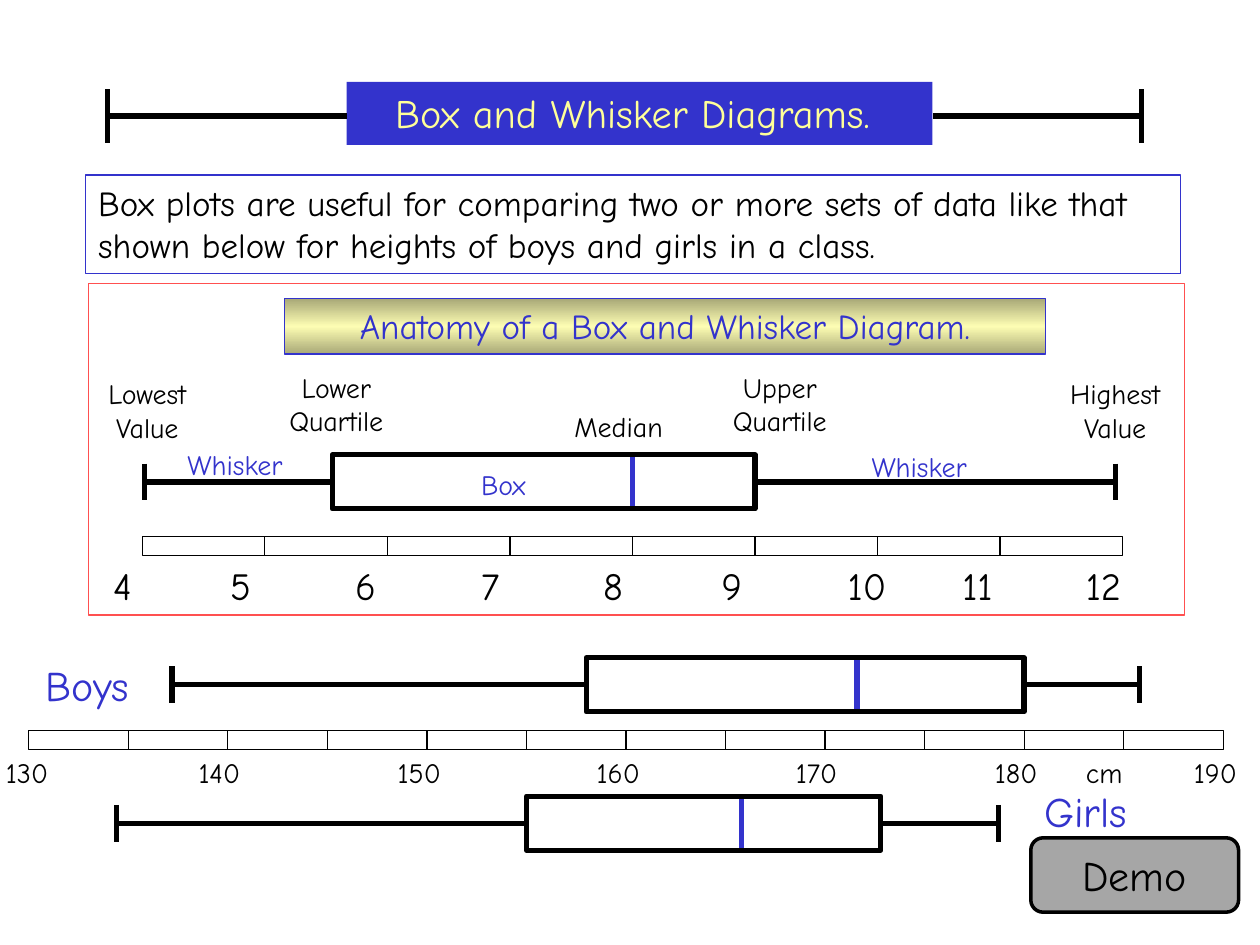
from copy import deepcopy
from dataclasses import dataclass

from lxml.etree import SubElement
from pptx import Presentation
from pptx.dml.color import RGBColor as RGB
from pptx.enum.shapes import MSO_CONNECTOR as LineKind, MSO_SHAPE as Preset
from pptx.enum.text import MSO_ANCHOR as Anchor, PP_ALIGN as Align
from pptx.oxml.ns import qn
from pptx.util import Cm, Pt


@dataclass(frozen=True)
class Theme:
    font: str = "Comic Neue"
    ink: str = "000000"
    blue: str = "3333CC"
    cream: str = "FFFF99"
    red: str = "FF5050"
    grey: str = "A6A6A6"
    gold: tuple = ("A8A877", "FDFDB3", "A8A877")
    label: float = 16
    body: float = 20
    tick: float = 22
    title: float = 23
    heading: float = 24
    thin: float = 0.75
    medium: float = 2
    thick: float = 3


@dataclass(frozen=True)
class Scale:
    left: float
    top: float
    width: float
    first: float
    last: float
    cells: int

    def x(self, value):
        return self.left + self.width * (value - self.first) / (self.last - self.first)


class Deck:
    def __init__(self, theme):
        self.theme = theme
        self.presentation = Presentation()
        self.presentation.slide_width = Cm(25.4)
        self.presentation.slide_height = Cm(19.05)
        self.slide = self.presentation.slides.add_slide(
            self.presentation.slide_layouts[6])

    def set_text(self, frame, words, size, color, align):
        frame.word_wrap = True
        paragraph = frame.paragraphs[0]
        paragraph.text = words
        paragraph.alignment = align
        paragraph.font.name = self.theme.font
        paragraph.font.size = Pt(size)
        paragraph.font.color.rgb = RGB.from_string(color)

    def label(self, words, left, top, width, height=0.94, size=None, color=None,
              align=Align.LEFT):
        box = self.slide.shapes.add_textbox(Cm(left), Cm(top), Cm(width), Cm(height))
        self.set_text(box.text_frame, words, size or self.theme.label,
                      color or self.theme.ink, align)

    def panel(self, left, top, width, height, fill=None, line=None, weight=None,
              preset=Preset.RECTANGLE, words=None, size=None, color=None,
              align=Align.CENTER, anchor=Anchor.TOP):
        """Add a filled or outlined shape; a tuple as fill makes a vertical gradient."""
        shape = self.slide.shapes.add_shape(
            preset, Cm(left), Cm(top), Cm(width), Cm(height))
        shape.shadow.inherit = False
        if isinstance(fill, tuple):
            self.shade(shape, fill)
        elif fill:
            shape.fill.solid()
            shape.fill.fore_color.rgb = RGB.from_string(fill)
        else:
            shape.fill.background()
        if line:
            shape.line.color.rgb = RGB.from_string(line)
            shape.line.width = Pt(weight or self.theme.thin)
        else:
            shape.line.fill.background()
        if words:
            shape.text_frame.vertical_anchor = anchor
            self.set_text(shape.text_frame, words, size, color, align)

    def shade(self, shape, colors):
        shape.fill.gradient()
        shape.fill.gradient_angle = 90
        stops = next(shape.element.iter(qn("a:gsLst")))
        stops.insert(1, deepcopy(stops[0]))
        for i, (stop, color) in enumerate(zip(shape.fill.gradient_stops, colors)):
            stop.position = i / (len(colors) - 1)
            stop.color.rgb = RGB.from_string(color)

    def stroke(self, x1, y1, x2, y2, color=None):
        line = self.slide.shapes.add_connector(
            LineKind.STRAIGHT, Cm(x1), Cm(y1), Cm(x2), Cm(y2))
        line.line.color.rgb = RGB.from_string(color or self.theme.ink)
        line.line.width = Pt(self.theme.thick)
        SubElement(line.element.spPr, qn("a:effectLst"))

    def whiskers(self, low, box_left, box_right, high, middle, cap):
        for end, side in ((low, box_left), (high, box_right)):
            self.stroke(end, middle, side, middle)
            self.stroke(end, middle - cap / 2, end, middle + cap / 2)

    def box_plot(self, scale, top, summary, height=1.09, cap=0.74):
        """Draw the five-number summary against a scale."""
        low, lower, median, upper, high = map(scale.x, summary)
        self.stroke(median, top, median, top + height, self.theme.blue)
        self.panel(lower, top, upper - lower, height,
                   line=self.theme.ink, weight=self.theme.thick)
        self.whiskers(low, lower, upper, high, top + height / 2, cap)

    def ruler(self, scale, height=0.38):
        cell = scale.width / scale.cells
        for i in range(scale.cells):
            self.panel(scale.left + i * cell, scale.top, cell, height,
                       line=self.theme.ink)


def draw_title(deck, theme):
    left, top, width, height = 6.99, 1.65, 11.81, 1.27
    deck.panel(left, top, width, height, fill=theme.blue,
               words="Box and Whisker Diagrams. ", size=theme.title,
               color=theme.cream)
    deck.whiskers(2.16, left, left + width, 23.01, 2.34, 1.09)
    deck.panel(1.73, 3.53, 22.07, 1.98, line=theme.blue,
               words="Box plots are useful for comparing two or more sets of data "
                     "like that shown below for heights of boys and girls in a class.",
               size=theme.body, color=theme.ink, align=Align.LEFT)


def draw_anatomy(deck, theme):
    scale = Scale(left=2.87, top=10.82, width=19.76, first=4, last=12, cells=8)
    deck.ruler(scale)
    tick_lefts = (2.03, 4.39, 6.91, 9.45, 11.91, 14.3, 16.84, 19.15, 21.64)
    for value, left in enumerate(tick_lefts, scale.first):
        deck.label(str(value), left, 11.2, 2.72, 1.19, theme.tick)

    deck.box_plot(scale, 9.17, (4.02, 5.55, 8, 9, 11.94))
    for words, left, top in (("Lower Quartile", 5.36, 7.34),
                             ("Upper Quartile", 14.3, 7.34),
                             ("Lowest Value", 1.55, 7.47),
                             ("Highest Value", 21.06, 7.47)):
        deck.label(words, left, top, 2.84, 1.63, align=Align.CENTER)
    for words, left, top, color in (("Median", 11.33, 8.13, theme.ink),
                                    ("Box", 9.45, 9.3, theme.blue),
                                    ("Whisker", 3.53, 8.89, theme.blue),
                                    ("Whisker", 17.32, 8.94, theme.blue)):
        deck.label(words, left, top, 2.84, color=color)

    deck.panel(5.74, 6.02, 15.34, 1.12, fill=theme.gold, line=theme.blue,
               words="Anatomy of a Box and Whisker Diagram.",
               size=theme.body, color=theme.blue)
    deck.panel(1.78, 5.72, 22.1, 6.68, line=theme.red)


def draw_heights(deck, theme):
    scale = Scale(left=0.58, top=14.73, width=24.08, first=130, last=190, cells=12)
    deck.ruler(scale)
    for height in range(scale.first, scale.last + 1, 10):
        deck.label(str(height), max(-0.13, scale.x(height) - 0.84), 15.11, 1.68)
    deck.label("cm", 21.64, 15.11, 2.01)

    deck.box_plot(scale, 13.26, (137.2, 158, 171.6, 180, 185.8))
    deck.box_plot(scale, 16.05, (134.4, 155, 165.8, 172.8, 178.7))
    for group, left, top in (("Boys", 0.66, 13.18), ("Girls", 20.8, 15.72)):
        deck.label(group, left, top, 3, 1.27, theme.heading, theme.blue)


def main():
    theme = Theme()
    deck = Deck(theme)
    draw_anatomy(deck, theme)
    draw_heights(deck, theme)
    draw_title(deck, theme)
    deck.panel(20.78, 16.89, 4.19, 1.5, fill=theme.grey, line=theme.ink,
               weight=theme.medium, preset=Preset.ROUNDED_RECTANGLE, words="Demo",
               size=theme.heading, color=theme.ink, anchor=Anchor.MIDDLE)
    deck.presentation.save("out.pptx")


if __name__ == "__main__":
    main()
